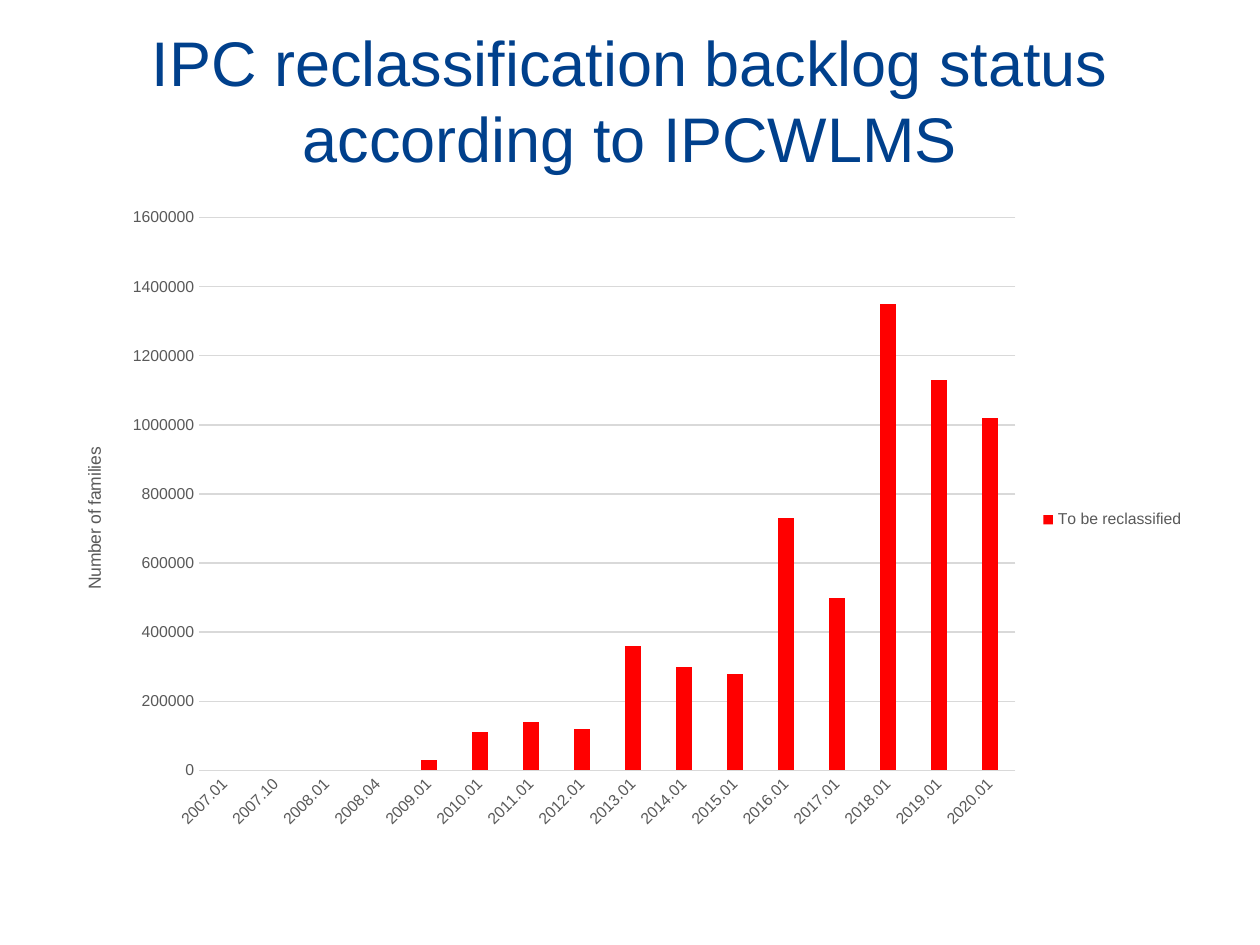
from dataclasses import dataclass

from lxml import etree
from pptx import Presentation
from pptx.chart.data import CategoryChartData
from pptx.dml.color import RGBColor
from pptx.enum.chart import XL_CHART_TYPE, XL_LEGEND_POSITION, XL_TICK_MARK
from pptx.enum.text import MSO_ANCHOR, PP_ALIGN
from pptx.oxml.ns import qn
from pptx.util import Inches, Pt

COLUMNS = XL_CHART_TYPE.COLUMN_CLUSTERED
LEGEND_RIGHT = XL_LEGEND_POSITION.RIGHT
NO_TICK = XL_TICK_MARK.NONE
MIDDLE = MSO_ANCHOR.MIDDLE
CENTER = PP_ALIGN.CENTER


@dataclass(frozen=True)
class Theme:
    font: str = "Arial"
    title_color: RGBColor = RGBColor(0x00, 0x40, 0x8C)
    label_color: RGBColor = RGBColor(0x59, 0x59, 0x59)
    grid_color: RGBColor = RGBColor(0xD9, 0xD9, 0xD9)
    bar_color: RGBColor = RGBColor(0xFF, 0x00, 0x00)
    title_size: int = 36
    axis_title_size: int = 10
    label_size: int = 9
    line_width: float = 0.75


@dataclass(frozen=True)
class Box:
    """Position and size as shares of the enclosing area."""
    x: float
    y: float
    w: float
    h: float


@dataclass(frozen=True)
class Backlog:
    release: str
    families: int | None


THEME = Theme()
SLIDE_WIDTH, SLIDE_HEIGHT = Inches(10), Inches(7.5)
TITLE_BOX = Box(0.05, 0.02, 0.9, 0.17)
CHART_BOX = Box(0.05, 0.21, 0.9, 0.68)
PLOT_BOX = Box(0.12, 0.03, 0.72, 0.86)

BACKLOG = [
    Backlog("2007.01", None), Backlog("2007.10", None),
    Backlog("2008.01", None), Backlog("2008.04", None),
    Backlog("2009.01", 30000), Backlog("2010.01", 110000),
    Backlog("2011.01", 140000), Backlog("2012.01", 120000),
    Backlog("2013.01", 360000), Backlog("2014.01", 300000),
    Backlog("2015.01", 280000), Backlog("2016.01", 730000),
    Backlog("2017.01", 500000), Backlog("2018.01", 1350000),
    Backlog("2019.01", 1130000), Backlog("2020.01", 1020000),
]


def place(box: Box) -> tuple[int, int, int, int]:
    return (int(box.x * SLIDE_WIDTH), int(box.y * SLIDE_HEIGHT),
            int(box.w * SLIDE_WIDTH), int(box.h * SLIDE_HEIGHT))


def style_font(font, size: int, color: RGBColor) -> None:
    font.name = THEME.font
    font.size = Pt(size)
    font.bold = False
    font.color.rgb = color


def style_line(line) -> None:
    line.color.rgb = THEME.grid_color
    line.width = Pt(THEME.line_width)


def set_plot_layout(chart, box: Box) -> None:
    """Fix the inner plot area as shares of the chart."""
    plot_area = chart._chartSpace.chart.plotArea
    for old_layout in plot_area.findall(qn("c:layout")):
        plot_area.remove(old_layout)
    layout = etree.Element(qn("c:layout"))
    plot_area.insert(0, layout)
    manual = etree.SubElement(layout, qn("c:manualLayout"))
    settings = {"layoutTarget": "inner", "xMode": "edge", "yMode": "edge",
                "x": box.x, "y": box.y, "w": box.w, "h": box.h}
    for tag, value in settings.items():
        etree.SubElement(manual, qn(f"c:{tag}")).set("val", str(value))


def add_title(slide, text: str) -> None:
    text_frame = slide.shapes.add_textbox(*place(TITLE_BOX)).text_frame
    text_frame.word_wrap = True
    text_frame.vertical_anchor = MIDDLE
    paragraph = text_frame.paragraphs[0]
    paragraph.text = text
    paragraph.alignment = CENTER
    style_font(paragraph.font, THEME.title_size, THEME.title_color)


def add_backlog_chart(slide) -> None:
    data = CategoryChartData()
    data.categories = [entry.release for entry in BACKLOG]
    data.add_series("To be reclassified", [entry.families for entry in BACKLOG])
    chart = slide.shapes.add_chart(COLUMNS, *place(CHART_BOX), data).chart
    chart.has_title = False
    style_font(chart.font, THEME.label_size, THEME.label_color)
    set_plot_layout(chart, PLOT_BOX)

    # Bars
    plot = chart.plots[0]
    plot.vary_by_categories = False
    plot.gap_width = 219
    plot.overlap = -27
    bar_fill = plot.series[0].format.fill
    bar_fill.solid()
    bar_fill.fore_color.rgb = THEME.bar_color

    # Axes
    category_axis, value_axis = chart.category_axis, chart.value_axis
    for axis in (category_axis, value_axis):
        axis.major_tick_mark = axis.minor_tick_mark = NO_TICK
        style_font(axis.tick_labels.font, THEME.label_size, THEME.label_color)
    style_line(category_axis.format.line)
    category_axis._element.txPr.find(qn("a:bodyPr")).set("rot", "-2700000")
    value_axis.format.line.fill.background()
    value_axis.minimum_scale = 0
    value_axis.maximum_scale = 1600000
    value_axis.major_unit = 200000
    value_axis.tick_labels.number_format = "0"
    value_axis.tick_labels.number_format_is_linked = False
    style_line(value_axis.major_gridlines.format.line)
    axis_title = value_axis.axis_title.text_frame
    axis_title.text = "Number of families"
    axis_title._txBody.find(qn("a:bodyPr")).set("rot", "-5400000")
    style_font(axis_title.paragraphs[0].font, THEME.axis_title_size, THEME.label_color)

    # Legend
    chart.has_legend = True
    chart.legend.position = LEGEND_RIGHT
    chart.legend.include_in_layout = False
    style_font(chart.legend.font, THEME.label_size, THEME.label_color)


def main() -> None:
    presentation = Presentation()
    presentation.slide_width, presentation.slide_height = SLIDE_WIDTH, SLIDE_HEIGHT
    slide = presentation.slides.add_slide(presentation.slide_layouts[6])
    add_title(slide, "IPC reclassification backlog status according to IPCWLMS")
    add_backlog_chart(slide)
    presentation.save("out.pptx")


if __name__ == "__main__":
    main()
